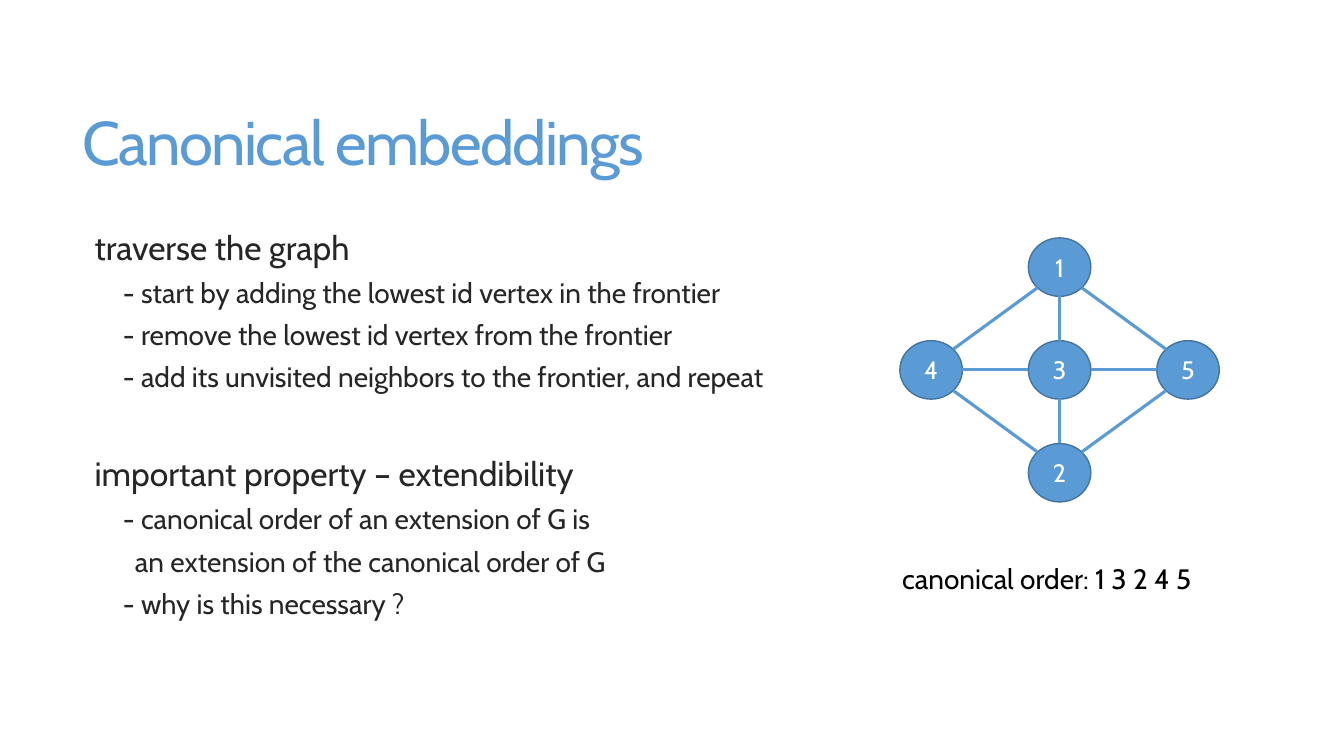
from dataclasses import dataclass
from math import hypot
from typing import NamedTuple

from lxml.etree import SubElement
from pptx import Presentation
from pptx.dml.color import RGBColor
from pptx.enum.shapes import MSO_CONNECTOR as Connector, MSO_SHAPE as Preset
from pptx.enum.text import MSO_ANCHOR as Anchor, PP_ALIGN as Align
from pptx.oxml.ns import qn
from pptx.slide import Slide
from pptx.text.text import TextFrame
from pptx.util import Emu, Inches, Pt

WIDTH, HEIGHT = Inches(13.33), Inches(7.5)


@dataclass(frozen=True)
class Theme:
    font: str = "Cabin"
    accent: str = "5B9BD5"
    outline: str = "43739E"
    body: str = "262626"
    caption: str = "000000"
    label: str = "FFFFFF"
    title_size: float = 44
    heading_size: float = 24
    item_size: float = 20
    label_size: float = 18
    tracking: float = -1.2
    outline_width: float = 1
    edge_width: float = 2.25


THEME = Theme()


class Area(NamedTuple):
    left: float
    top: float
    width: float
    height: float


class Line(NamedTuple):
    text: str
    size: float
    indent: float
    before: float


class Vertex(NamedTuple):
    column: int
    row: int


TITLE = Area(5.4, 7.33, 88.37, 24.13)
BODY = Area(5.55, 29.33, 56.41, 54.93)
CAPTION = Area(66.39, 73.6, 24.91, 5.87)

CENTRE_X, CENTRE_Y = 78.84, 48.93
COLUMN_STEP, ROW_STEP = 9.56, 13.6
VERTEX_WIDTH, VERTEX_HEIGHT = 4.65, 7.73

VERTICES = {
    "1": Vertex(0, -1),
    "2": Vertex(0, 1),
    "3": Vertex(0, 0),
    "4": Vertex(-1, 0),
    "5": Vertex(1, 0),
}
EDGES = ("41", "31", "51", "43", "35", "23", "25", "42")


def heading(text: str, before: float = 0) -> Line:
    return Line(text, THEME.heading_size, 0.1, before)


def item(text: str, indent: float = 0.38) -> Line:
    return Line(text, THEME.item_size, indent, 6)


OUTLINE = (
    heading("traverse the graph"),
    item("- start by adding the lowest id vertex in the frontier"),
    item("- remove the lowest id vertex from the frontier"),
    item("- add its unvisited neighbors to the frontier, and repeat"),
    heading("important property – extendibility", before=43),
    item("- canonical order of an extension of G is"),
    item("an extension of the canonical order of G", indent=0.5),
    item("- why is this necessary ?"),
)


def across(percent: float) -> Emu:
    return Emu(round(WIDTH * percent / 100))


def down(percent: float) -> Emu:
    return Emu(round(HEIGHT * percent / 100))


def place(area: Area) -> tuple[Emu, Emu, Emu, Emu]:
    return across(area.left), down(area.top), across(area.width), down(area.height)


def write(frame: TextFrame, text: str, *, size: float, color: str,
          first: bool = True, align: Align = Align.LEFT, indent: float = 0,
          before: float = 0, leading: float = 1, tracking: float = 0) -> None:
    paragraph = frame.paragraphs[0] if first else frame.add_paragraph()
    paragraph.alignment = align
    paragraph.space_before = Pt(before)
    paragraph.line_spacing = leading
    if indent:
        paragraph._p.get_or_add_pPr().set("marL", str(Inches(indent)))
    run = paragraph.add_run()
    run.text = text
    run.font.name = THEME.font
    run.font.size = Pt(size)
    run.font.color.rgb = RGBColor.from_string(color)
    if tracking:
        run._r.get_or_add_rPr().set("spc", str(round(tracking * 100)))


def add_frame(slide: Slide, area: Area, *, anchor: Anchor = Anchor.TOP,
              wrap: bool = True) -> TextFrame:
    frame = slide.shapes.add_textbox(*place(area)).text_frame
    frame.word_wrap = wrap
    frame.vertical_anchor = anchor
    return frame


def centre(vertex: Vertex) -> tuple[float, float]:
    return CENTRE_X + vertex.column * COLUMN_STEP, CENTRE_Y + vertex.row * ROW_STEP


def rim(vertex: Vertex, toward: Vertex) -> tuple[Emu, Emu]:
    x, y = centre(vertex)
    columns, rows = toward.column - vertex.column, toward.row - vertex.row
    reach = 2 * hypot(columns, rows)
    return (across(x + VERTEX_WIDTH * columns / reach),
            down(y + VERTEX_HEIGHT * rows / reach))


def draw_vertex(slide: Slide, label: str, vertex: Vertex) -> None:
    x, y = centre(vertex)
    area = Area(x - VERTEX_WIDTH / 2, y - VERTEX_HEIGHT / 2, VERTEX_WIDTH, VERTEX_HEIGHT)
    disc = slide.shapes.add_shape(Preset.OVAL, *place(area))
    disc.shadow.inherit = False
    disc.fill.solid()
    disc.fill.fore_color.rgb = RGBColor.from_string(THEME.accent)
    disc.line.color.rgb = RGBColor.from_string(THEME.outline)
    disc.line.width = Pt(THEME.outline_width)
    disc.text_frame.vertical_anchor = Anchor.MIDDLE
    write(disc.text_frame, label, size=THEME.label_size, color=THEME.label,
          align=Align.CENTER)


def draw_edge(slide: Slide, start: Vertex, end: Vertex) -> None:
    edge = slide.shapes.add_connector(Connector.STRAIGHT, *rim(start, end), *rim(end, start))
    edge.line.color.rgb = RGBColor.from_string(THEME.accent)
    edge.line.width = Pt(THEME.edge_width)
    SubElement(edge._element.spPr, qn("a:effectLst"))


def main() -> None:
    deck = Presentation()
    deck.slide_width, deck.slide_height = WIDTH, HEIGHT
    slide = deck.slides.add_slide(deck.slide_layouts[6])

    write(add_frame(slide, TITLE, anchor=Anchor.MIDDLE), "Canonical embeddings",
          size=THEME.title_size, color=THEME.accent, leading=0.85,
          tracking=THEME.tracking)

    body = add_frame(slide, BODY)
    for number, line in enumerate(OUTLINE):
        write(body, line.text, size=line.size, color=THEME.body, first=number == 0,
              indent=line.indent, before=line.before)

    for label, vertex in VERTICES.items():
        draw_vertex(slide, label, vertex)
    for start, end in EDGES:
        draw_edge(slide, VERTICES[start], VERTICES[end])

    write(add_frame(slide, CAPTION, wrap=False), "canonical order: 1 3 2 4 5",
          size=THEME.item_size, color=THEME.caption)

    deck.save("out.pptx")


if __name__ == "__main__":
    main()
